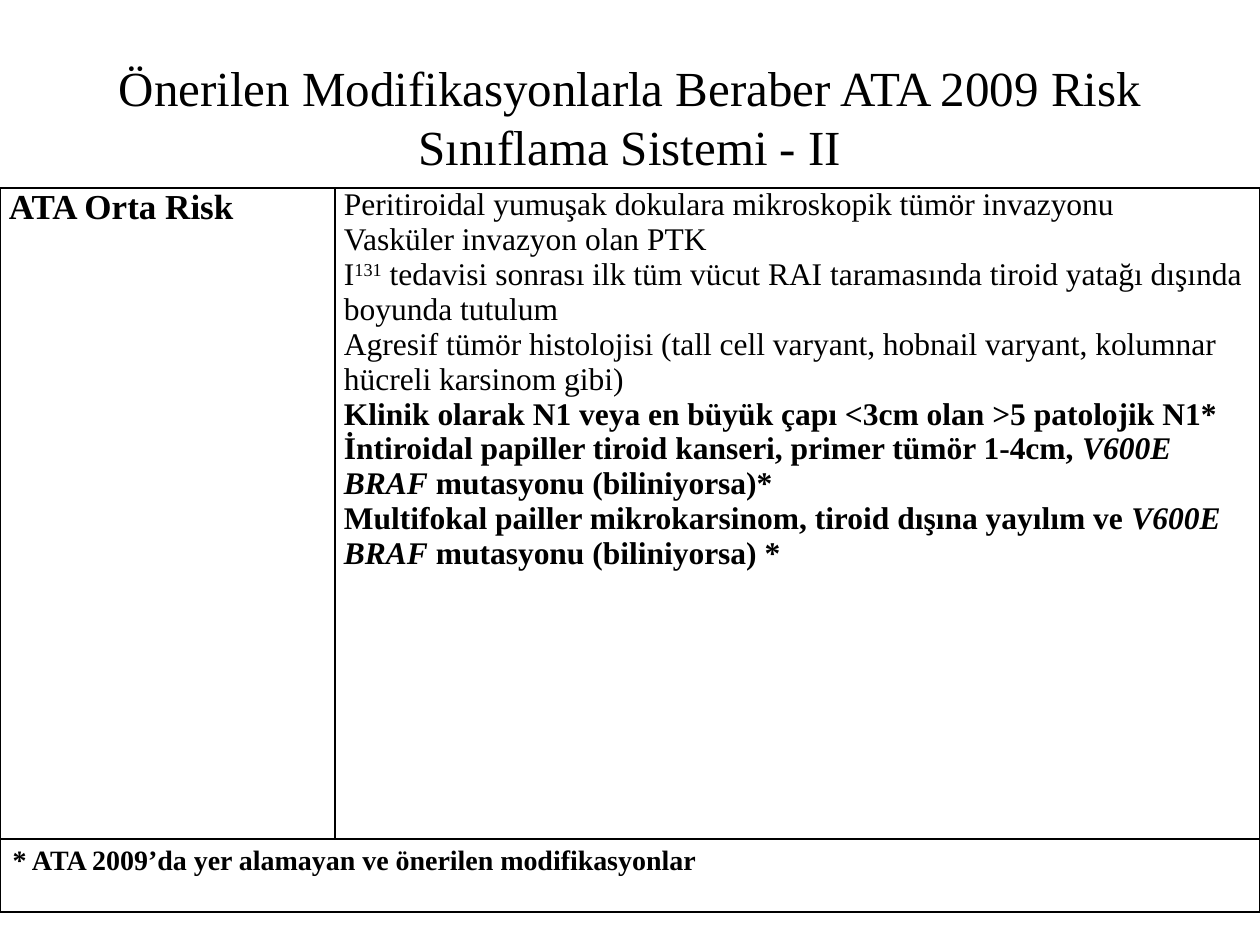
"""Build a slide with the ATA intermediate risk table."""
from lxml import etree
from pptx import Presentation
from pptx.dml.color import RGBColor
from pptx.enum.text import MSO_ANCHOR, PP_ALIGN
from pptx.oxml.ns import qn
from pptx.util import Inches, Pt

CENTER = PP_ALIGN.CENTER
MIDDLE = MSO_ANCHOR.MIDDLE
COLORS = {"ink": "000000", "paper": "FFFFFF"}
FONT = "Times New Roman"

TITLE = "Önerilen Modifikasyonlarla Beraber ATA 2009 Risk Sınıflama Sistemi - II"
RISK_LEVEL = "ATA Orta Risk"
FOOTNOTE = "* ATA 2009’da yer alamayan ve önerilen modifikasyonlar"
MUTATION = ("V600E BRAF", "italic")
CRITERIA = [
    ["Peritiroidal yumuşak dokulara mikroskopik tümör invazyonu"],
    ["Vasküler invazyon olan PTK"],
    ["I", ("131", "superscript"),
     " tedavisi sonrası ilk tüm vücut RAI taramasında tiroid yatağı dışında boyunda tutulum"],
    ["Agresif tümör histolojisi (tall cell varyant, hobnail varyant, kolumnar hücreli karsinom gibi)"],
]
MODIFICATIONS = [
    ["Klinik olarak N1 veya en büyük çapı <3cm olan >5 patolojik N1*"],
    ["İntiroidal papiller tiroid kanseri, primer tümör 1-4cm, ", MUTATION,
     " mutasyonu (biliniyorsa)*"],
    ["Multifokal pailler mikrokarsinom, tiroid dışına yayılım ve ", MUTATION,
     " mutasyonu (biliniyorsa) *"],
]


class SlideBuilder:
    """Hold the style and the current slide."""

    def __init__(self, presentation):
        self.slide = presentation.slides.add_slide(presentation.slide_layouts[6])
        self.ink = RGBColor.from_string(COLORS["ink"])
        self.paper = RGBColor.from_string(COLORS["paper"])

    def fill_text(self, frame, paragraphs, size):
        """Fill a text frame with (pieces, bold) paragraphs."""
        frame.word_wrap = True
        for index, (pieces, bold) in enumerate(paragraphs):
            paragraph = frame.add_paragraph() if index else frame.paragraphs[0]
            font = paragraph.font
            font.name, font.size, font.bold = FONT, Pt(size), bold
            font.color.rgb = self.ink
            for piece in pieces:
                text, style = (piece, None) if isinstance(piece, str) else piece
                run = paragraph.add_run()
                run.text = text
                if style == "italic":
                    run.font.italic = True
                elif style == "superscript":
                    run._r.get_or_add_rPr().set("baseline", "30000")

    def title(self, text, left, top, width, height, size):
        """Add a centred title."""
        box = self.slide.shapes.add_textbox(
            Inches(left), Inches(top), Inches(width), Inches(height))
        self.fill_text(box.text_frame, [([text], False)], size)
        box.text_frame.vertical_anchor = MIDDLE
        box.text_frame.paragraphs[0].alignment = CENTER

    def table(self, left, top, columns, rows):
        """Add an unstyled bordered table."""
        table = self.slide.shapes.add_table(
            len(rows), len(columns), Inches(left), Inches(top),
            Inches(sum(columns)), Inches(sum(rows))).table
        table.first_row = table.horz_banding = False
        for column, width in zip(table.columns, columns):
            column.width = Inches(width)
        for row, height in zip(table.rows, rows):
            row.height = Inches(height)
        for cell in table.iter_cells():
            self.borders(cell)
            cell.fill.solid()
            cell.fill.fore_color.rgb = self.paper
        return table

    def borders(self, cell):
        """Draw all four edges of a cell."""
        properties = cell._tc.get_or_add_tcPr()
        for edge in ("lnL", "lnR", "lnT", "lnB"):
            line = etree.SubElement(properties, qn(f"a:{edge}"), w=str(Pt(1)))
            fill = etree.SubElement(line, qn("a:solidFill"))
            etree.SubElement(fill, qn("a:srgbClr"), val=COLORS["ink"])

    def tight_cell(self, cell, paragraphs, size):
        """Fill a cell that has narrow margins."""
        cell.margin_left = cell.margin_right = Inches(0.07)
        cell.margin_top = cell.margin_bottom = Inches(0)
        self.fill_text(cell.text_frame, paragraphs, size)


def main():
    """Build and save the slide."""
    presentation = Presentation()
    presentation.slide_width, presentation.slide_height = Inches(10), Inches(7.5)
    builder = SlideBuilder(presentation)
    builder.title(TITLE, 0.5, 0.3, 9, 1.25, 28)
    table = builder.table(0, 1.49, [2.66, 7.34], [5.17, 0.58])
    builder.tight_cell(table.cell(0, 0), [([RISK_LEVEL], True)], 20)
    criteria = [(pieces, False) for pieces in CRITERIA]
    criteria += [(pieces, True) for pieces in MODIFICATIONS]
    builder.tight_cell(table.cell(0, 1), criteria, 18)
    footer = table.cell(1, 0)
    footer.merge(table.cell(1, 1))
    builder.fill_text(footer.text_frame, [([FOOTNOTE], True)], 16)
    presentation.save("out.pptx")


if __name__ == "__main__":
    main()
